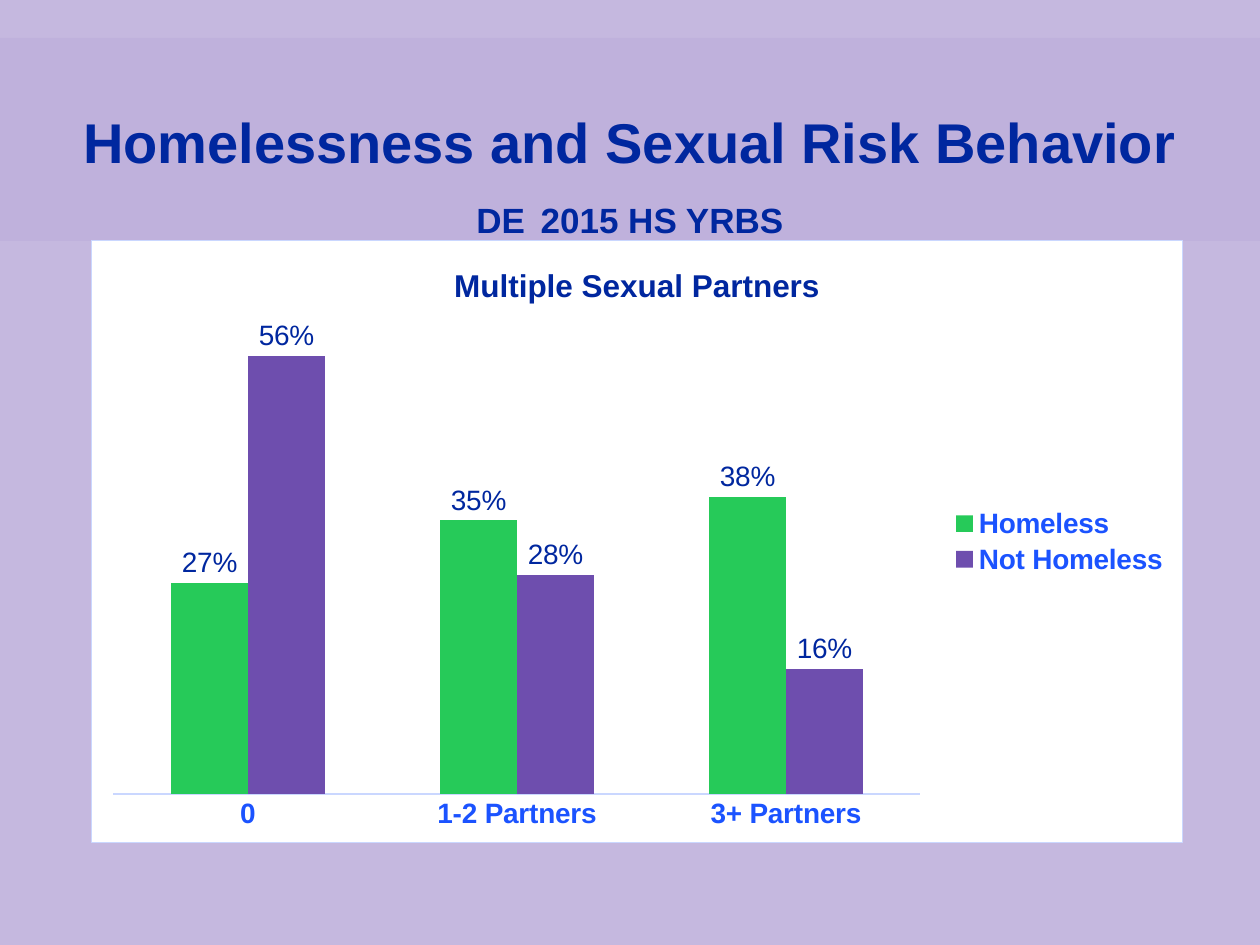
from dataclasses import dataclass

from pptx import Presentation
from pptx.chart.data import CategoryChartData
from pptx.dml.color import RGBColor
from pptx.enum.chart import XL_CHART_TYPE as ChartType
from pptx.enum.chart import XL_LABEL_POSITION as LabelPosition
from pptx.enum.chart import XL_LEGEND_POSITION as LegendPosition
from pptx.enum.chart import XL_TICK_MARK as TickMark
from pptx.enum.shapes import MSO_SHAPE as Shape
from pptx.enum.text import MSO_ANCHOR as Anchor
from pptx.enum.text import PP_ALIGN as Align
from pptx.oxml import parse_xml
from pptx.oxml.ns import nsdecls, qn
from pptx.util import Emu, Pt

EMU_PER_PX = 914400 / 126


def px(length):
    return Emu(round(length * EMU_PER_PX))


@dataclass(frozen=True)
class Theme:
    font: str = "Arial"
    background: str = "C5B8DF"
    banner: str = "BFB1DC"
    navy: str = "00279F"
    blue: str = "1B53FF"
    border: str = "CAD7FF"
    panel: str = "FFFFFF"
    series: tuple = ("26CA59", "6E4EAE")
    title_size: int = 32
    subtitle_size: int = 20
    chart_title_size: int = 18
    label_size: int = 16


class SlideBuilder:
    def __init__(self, slide, theme):
        self.slide = slide
        self.theme = theme

    def style_font(self, font, size, color, bold=False):
        font.name = self.theme.font
        font.size = Pt(size)
        font.bold = bold
        font.color.rgb = RGBColor.from_string(color)

    def fill(self, target, color):
        target.fill.solid()
        target.fill.fore_color.rgb = RGBColor.from_string(color)

    def add_banner(self, left, top, width, height, inset, lines):
        """Each line is a list of (text, size) runs."""
        shape = self.slide.shapes.add_shape(
            Shape.RECTANGLE, px(left), px(top), px(width), px(height))
        shape.shadow.inherit = False
        self.fill(shape, self.theme.banner)
        shape.line.fill.background()
        frame = shape.text_frame
        frame.word_wrap = True
        frame.vertical_anchor = Anchor.TOP
        frame.margin_top = px(inset)
        for index, runs in enumerate(lines):
            paragraph = frame.add_paragraph() if index else frame.paragraphs[0]
            paragraph.alignment = Align.CENTER
            paragraph.space_before = Pt(1.5 if index else 0)
            for text, size in runs:
                run = paragraph.add_run()
                run.text = text
                self.style_font(run.font, size, self.theme.navy, bold=True)

    def add_column_chart(self, left, top, width, height, title, categories,
                         series, plot):
        theme = self.theme
        data = CategoryChartData(number_format="0%")
        data.categories = categories
        for name, values in series.items():
            data.add_series(name, values)
        chart = self.slide.shapes.add_chart(
            ChartType.COLUMN_CLUSTERED, px(left), px(top), px(width),
            px(height), data).chart
        self.style_font(chart.font, 10, theme.navy)

        # Title and legend
        chart.has_title = True
        chart.chart_title.include_in_layout = False
        chart.chart_title.text_frame.text = title
        title_run = chart.chart_title.text_frame.paragraphs[0].runs[0]
        self.style_font(title_run.font, theme.chart_title_size, theme.navy, True)
        chart.has_legend = True
        chart.legend.position = LegendPosition.RIGHT
        chart.legend.include_in_layout = False
        self.style_font(chart.legend.font, theme.label_size, theme.blue, True)

        # Axes
        axis = chart.category_axis
        axis.major_tick_mark = TickMark.NONE
        axis.format.line.color.rgb = RGBColor.from_string(theme.border)
        axis.format.line.width = Pt(0.75)
        self.style_font(axis.tick_labels.font, theme.label_size, theme.blue, True)
        value_axis = chart.value_axis
        value_axis.minimum_scale = 0
        value_axis.maximum_scale = 0.6
        value_axis.has_major_gridlines = False
        value_axis.visible = False

        # Columns and their labels
        columns = chart.plots[0]
        columns.gap_width = 150
        columns.overlap = 0
        columns.vary_by_categories = False
        for column, color in zip(columns.series, theme.series):
            self.fill(column.format, color)
            column.invert_if_negative = False
            labels = column.data_labels
            labels.show_value = True
            labels.number_format = "0%"
            labels.number_format_is_linked = False
            labels.position = LabelPosition.OUTSIDE_END
            self.style_font(labels.font, theme.label_size, theme.navy)

        self.frame_chart(chart)
        self.place_plot(chart, plot)

    def frame_chart(self, chart):
        theme = self.theme
        chart.element.find(qn("c:chart")).addnext(parse_xml(
            f'<c:spPr {nsdecls("c", "a")}>'
            f'<a:solidFill><a:srgbClr val="{theme.panel}"/></a:solidFill>'
            f'<a:ln w="{Pt(0.75)}"><a:solidFill><a:srgbClr val="{theme.border}"/>'
            '</a:solidFill></a:ln></c:spPr>'))

    def place_plot(self, chart, plot):
        """Place the inner plot area by fractions of the chart (x, y, w, h)."""
        area = chart.element.find(qn("c:chart")).find(qn("c:plotArea"))
        for layout in area.findall(qn("c:layout")):
            area.remove(layout)
        modes = '<c:xMode val="edge"/><c:yMode val="edge"/>'
        sizes = "".join(f'<c:{key} val="{value}"/>'
                        for key, value in zip("xywh", plot))
        area.insert(0, parse_xml(
            f'<c:layout {nsdecls("c")}><c:manualLayout>'
            f'<c:layoutTarget val="inner"/>{modes}{sizes}'
            '</c:manualLayout></c:layout>'))


def main():
    presentation = Presentation()
    presentation.slide_width = px(1260)
    presentation.slide_height = px(945)
    slide = presentation.slides.add_slide(presentation.slide_layouts[6])
    theme = Theme()
    builder = SlideBuilder(slide, theme)
    builder.fill(slide.background, theme.background)

    # Heading band
    builder.add_banner(0, 38, 1260, 203, inset=70, lines=[
        [("Homelessness and Sexual Risk Behavior", theme.title_size)],
        [("DE", theme.subtitle_size), (" ", theme.title_size),
         ("2015 HS YRBS", theme.subtitle_size)],
    ])

    # Partners by housing status
    builder.add_column_chart(
        91, 240, 1092, 603,
        title="Multiple Sexual Partners",
        categories=["0", "1-2 Partners", "3+ Partners"],
        series={"Homeless": (0.27, 0.35, 0.38),
                "Not Homeless": (0.56, 0.28, 0.16)},
        plot=(0.02, 0.14, 0.74, 0.78))

    presentation.save("out.pptx")


if __name__ == "__main__":
    main()
